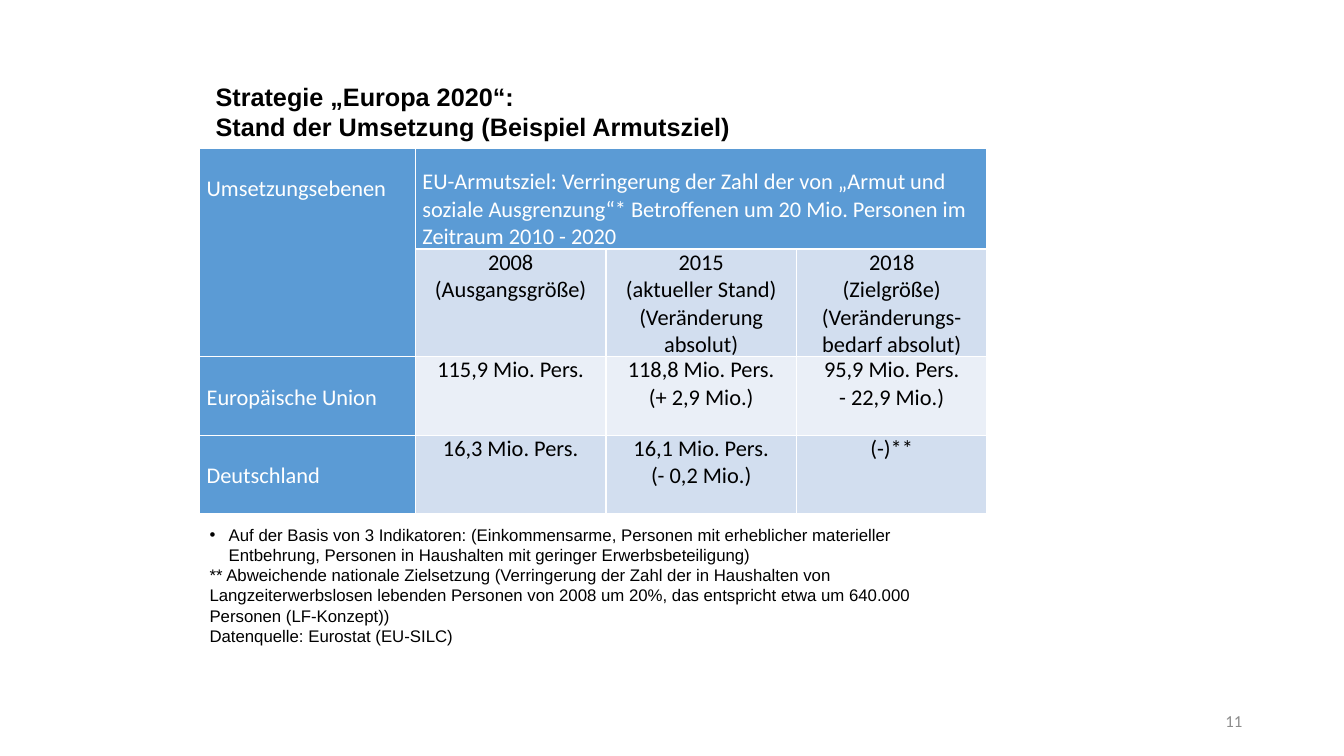
import pptx
import pptx.dml.color
import pptx.enum.text
import pptx.oxml
import pptx.oxml.ns
import pptx.util

Inches = pptx.util.Inches
Pt = pptx.util.Pt
ALIGN = pptx.enum.text.PP_ALIGN
ANCHOR = pptx.enum.text.MSO_ANCHOR
COLORS = {"text": "000000", "white": "FFFFFF", "grey": "8C8C8C",
          "blue": "5B9BD5", "band": "D2DEEF", "light": "EAEFF7"}


class Deck:
    """Holds the presentation, its style and the current slide."""

    def __init__(self):
        self.prs = pptx.Presentation()
        self.prs.slide_width = Inches(13.33)
        self.prs.slide_height = Inches(7.5)
        self.s = self.prs.slides.add_slide(self.prs.slide_layouts[6])

    def add_lines(self, tf, lines, size, font, color="text", bold=False, align=ALIGN.LEFT):
        for i, line in enumerate(lines):
            p = tf.paragraphs[0] if i == 0 else tf.add_paragraph()
            p.alignment = align
            r = p.add_run()
            r.text = line
            r.font.size = Pt(size)
            r.font.name = font
            r.font.bold = bold
            r.font.color.rgb = pptx.dml.color.RGBColor.from_string(COLORS[color])

    def text(self, box, lines, size, font="Arial", anchor=ANCHOR.MIDDLE, **style):
        tf = self.s.shapes.add_textbox(*map(Inches, box)).text_frame
        tf.word_wrap = True
        tf.vertical_anchor = anchor
        self.add_lines(tf, lines, size, font, **style)
        return tf

    def bullet(self, p, indent):
        pPr = p._p.get_or_add_pPr()
        pPr.set("marL", str(Inches(indent)))
        pPr.set("indent", str(-Inches(indent)))
        ns = pptx.oxml.ns.nsdecls("a")
        pPr.append(pptx.oxml.parse_xml(f'<a:buFont {ns} typeface="Arial"/>'))
        pPr.append(pptx.oxml.parse_xml(f'<a:buChar {ns} char="•"/>'))

    def table(self, box, widths, heights):
        shape = self.s.shapes.add_table(len(heights), len(widths), *map(Inches, box))
        tbl = shape.table
        tbl.first_row = tbl.horz_banding = False
        for col, width in zip(tbl.columns, widths):
            col.width = Inches(width)
        for row, height in zip(tbl.rows, heights):
            row.height = Inches(height)
        return tbl

    def cell(self, cell, lines, fill, top=0, **style):
        cell.margin_left = cell.margin_right = Inches(0.07)
        cell.margin_top = Inches(top)
        cell.margin_bottom = 0
        cell.fill.solid()
        cell.fill.fore_color.rgb = pptx.dml.color.RGBColor.from_string(COLORS[fill])
        for i, side in enumerate("LRTB"):
            cell._tc.tcPr.insert(i, pptx.oxml.parse_xml(
                f'<a:ln{side} {pptx.oxml.ns.nsdecls("a")} w="{Pt(1)}"><a:solidFill>'
                f'<a:srgbClr val="{COLORS["white"]}"/></a:solidFill></a:ln{side}>'))
        self.add_lines(cell.text_frame, lines, 16, "Calibri", **style)


def main():
    deck = Deck()
    deck.text((9.42, 6.95, 3, 0.4), ["11"], 12, "Calibri", color="grey", align=ALIGN.RIGHT)

    goal = ("EU-Armutsziel: Verringerung der Zahl der von „Armut und soziale Ausgrenzung“* "
            "Betroffenen um 20 Mio. Personen im Zeitraum 2010 - 2020")
    rows = [
        (["Umsetzungsebenen"], [goal], [], []),
        ([], ["2008 (Ausgangsgröße)"],
         ["2015", "(aktueller Stand)", "(Veränderung absolut)"],
         ["2018", "(Zielgröße)", "(Veränderungs-bedarf absolut)"]),
        (["Europäische Union"], ["115,9 Mio. Pers."],
         ["118,8 Mio. Pers.", "(+ 2,9 Mio.)"], ["95,9 Mio. Pers.", "- 22,9 Mio.)"]),
        (["Deutschland"], ["16,3 Mio. Pers."],
         ["16,1 Mio. Pers.", "(- 0,2 Mio.)"], ["(-)**"]),
    ]
    tbl = deck.table((1.98, 1.47, 7.83, 3.17), [2.14] + [1.89] * 3, [0.83] + [0.78] * 3)
    for i, row in enumerate(rows):
        for j, lines in enumerate(row):
            if i == 0 or j == 0:
                deck.cell(tbl.cell(i, j), lines, "blue", top=0.27 if j == 0 else 0.2,
                          color="white")
            else:
                deck.cell(tbl.cell(i, j), lines, "light" if i == 2 else "band",
                          align=ALIGN.CENTER)
    tbl.cell(0, 0).merge(tbl.cell(1, 0))
    tbl.cell(0, 1).merge(tbl.cell(0, 3))

    notes = deck.text((1.98, 5.15, 7.77, 1.31), [
        "Auf der Basis von 3 Indikatoren: (Einkommensarme, Personen mit erheblicher "
        "materieller Entbehrung, Personen in Haushalten mit geringer Erwerbsbeteiligung)",
        "** Abweichende nationale Zielsetzung (Verringerung der Zahl der in Haushalten von "
        "Langzeiterwerbslosen lebenden Personen von 2008 um 20%, das entspricht etwa um "
        "640.000 Personen (LF-Konzept))",
        "Datenquelle: Eurostat (EU-SILC)"], 12)
    deck.bullet(notes.paragraphs[0], 0.19)

    deck.text((2.04, 0.76, 7.71, 0.71),
              ["Strategie „Europa 2020“:", "Stand der Umsetzung (Beispiel Armutsziel)"],
              18, anchor=ANCHOR.TOP, bold=True)
    deck.prs.save("out.pptx")


if __name__ == "__main__":
    main()
